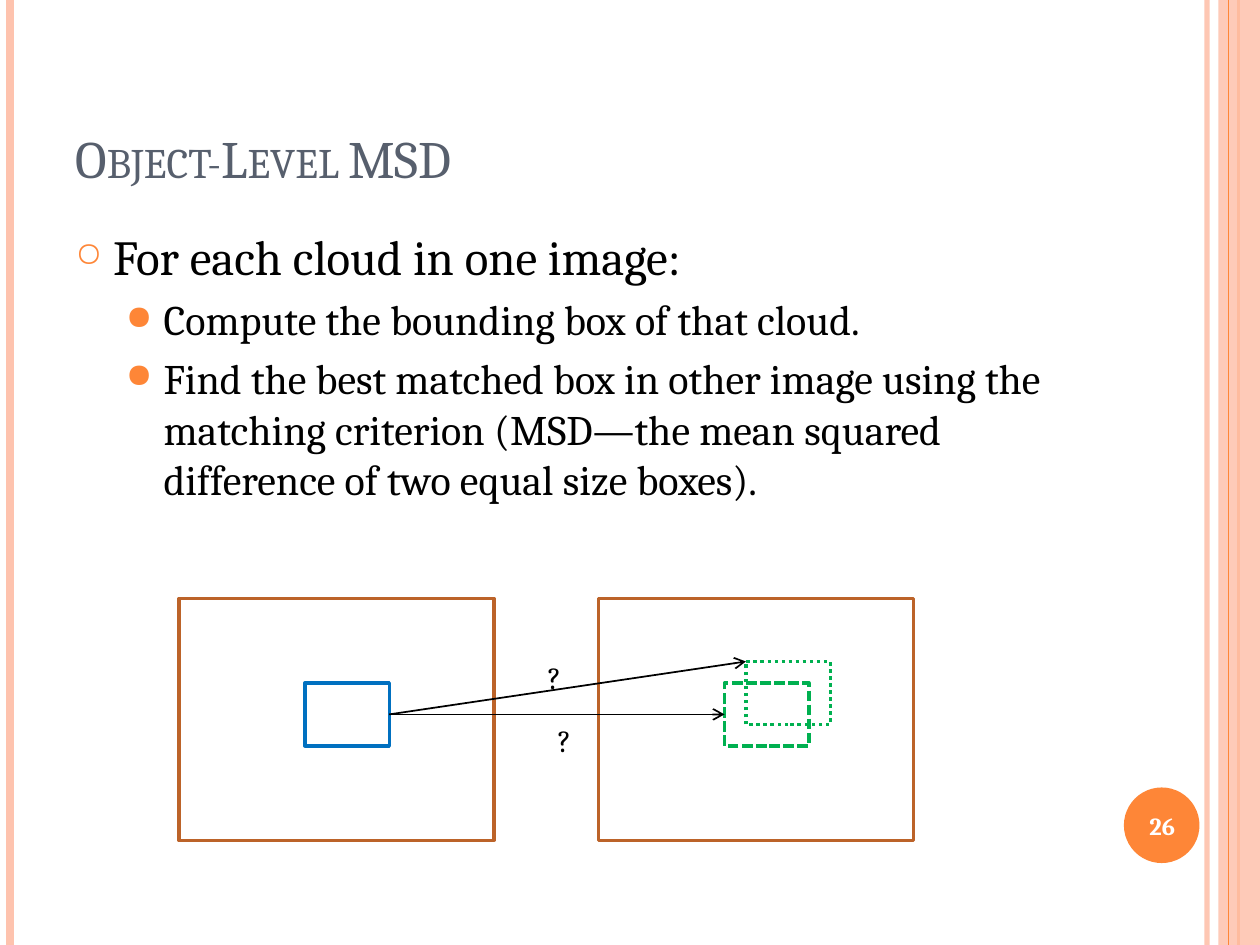
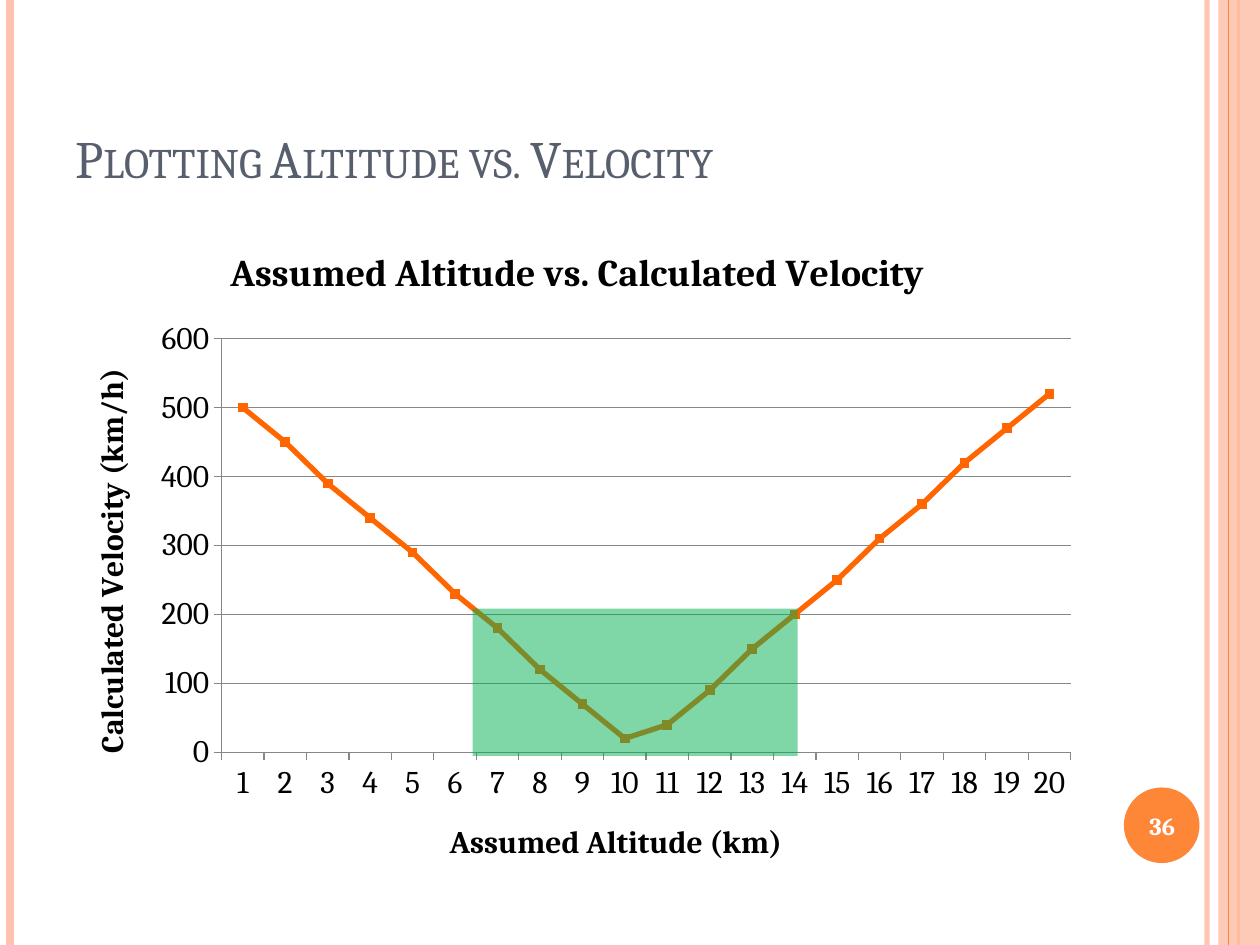
from lxml.etree import SubElement
from pptx import Presentation
from pptx.chart.data import CategoryChartData
from pptx.dml.color import RGBColor
from pptx.enum.chart import XL_CHART_TYPE, XL_MARKER_STYLE, XL_TICK_MARK
from pptx.enum.dml import MSO_LINE
from pptx.enum.shapes import MSO_CONNECTOR, MSO_SHAPE
from pptx.enum.text import MSO_ANCHOR, PP_ALIGN
from pptx.oxml.ns import qn
from pptx.util import Inches, Pt

FONT = "Cambria"
ORANGE, PEACH, SLATE = "FE8637", "FEC3AE", "575F6D"
BLACK, WHITE, GREY = "000000", "FFFFFF", "878787"
BROWN, BLUE, GREEN, FLAME = "BC6329", "0070C0", "00B050", "FF6600"
BODY = (0.5, 1.75, 8.17, 5.33)


def color(code):
    return RGBColor.from_string(code)


def fade(shape, percent):
    """Make every colour of a shape partly transparent."""
    if percent < 100:
        for tint in shape._element.spPr.iter(qn("a:srgbClr")):
            SubElement(tint, qn("a:alpha"), val=str(percent * 1000))


def style(font, size, tint=BLACK, bold=False):
    font.name, font.size, font.bold = FONT, Pt(size), bold
    font.color.rgb = color(tint)


def bullet(para, sign, scale, left):
    props = para._p.get_or_add_pPr()
    props.set("marL", str(Inches(left)))
    props.set("indent", str(Inches(-0.3)))
    tint = SubElement(props, qn("a:buClr"))
    SubElement(tint, qn("a:srgbClr"), val=ORANGE)
    SubElement(props, qn("a:buSzPct"), val=str(scale * 1000))
    SubElement(props, qn("a:buChar"), char=sign)


def write(para, words, size=18, tint=BLACK, bold=False, small=False,
          align=None, before=0):
    run = para.add_run()
    run.text = words
    style(run.font, size, tint, bold)
    if small:
        run.font._element.set("cap", "small")
    if align is not None:
        para.alignment = align
    if before:
        para.space_before = Pt(before)


class Deck:
    def __init__(self):
        self.pres = Presentation()
        self.pres.slide_width, self.pres.slide_height = Inches(10), Inches(7.5)
        self.slide = None

    def start(self, title, number):
        """Add a slide with its side bands, title and page number."""
        self.slide = self.pres.slides.add_slide(self.pres.slide_layouts[6])
        # Side bands
        for x, tint, width, alpha in ((9.58, PEACH, 3, 93), (0.08, PEACH, 4.5, 100),
                                      (9.83, ORANGE, 1.5, 100)):
            self.line((x, 0), (x, 7.5), tint, width, alpha=alpha)
        self.shape((9.67, 0, 0.33, 7.5), fill=PEACH, alpha=87)
        self.line((9.75, 0), (9.75, 7.5), ORANGE, 0.75)
        # Title and page number
        self.text((0.5, 0.3, 8.17, 1.25), title, anchor=MSO_ANCHOR.BOTTOM,
                  size=30, tint=SLATE, small=True)
        self.shape((8.92, 6.25, 0.6, 0.6), MSO_SHAPE.OVAL, fill=ORANGE)
        self.text((8.89, 6.27, 0.67, 0.57), str(number), anchor=MSO_ANCHOR.MIDDLE,
                  size=14, tint=WHITE, bold=True, align=PP_ALIGN.CENTER)

    def frame(self, box, anchor=MSO_ANCHOR.TOP, wrap=True):
        frame = self.slide.shapes.add_textbox(*map(Inches, box)).text_frame
        frame.word_wrap, frame.vertical_anchor = wrap, anchor
        return frame

    def text(self, box, words, anchor=MSO_ANCHOR.TOP, wrap=True, **form):
        write(self.frame(box, anchor, wrap).paragraphs[0], words, **form)

    def bullets(self, box, items):
        frame = self.frame(box)
        for i, (level, words) in enumerate(items):
            para = frame.add_paragraph() if i else frame.paragraphs[0]
            sign, scale, left, size = (("○", 70, 0.3, 28), ("●", 80, 0.7, 24))[level]
            bullet(para, sign, scale, left)
            write(para, words, size=size, before=4.8 if i else 0)

    def shape(self, box, kind=MSO_SHAPE.RECTANGLE, fill=None, edge=None,
              dash=None, alpha=100):
        shape = self.slide.shapes.add_shape(kind, *map(Inches, box))
        shape.shadow.inherit = False
        if fill:
            shape.fill.solid()
            shape.fill.fore_color.rgb = color(fill)
        else:
            shape.fill.background()
        if edge:
            shape.line.color.rgb = color(edge)
            shape.line.width = Pt(2)
            shape.line.dash_style = dash
        else:
            shape.line.fill.background()
        fade(shape, alpha)
        return shape

    def line(self, start, end, tint=BLACK, width=1.0, arrow=False, alpha=100):
        line = self.slide.shapes.add_connector(
            MSO_CONNECTOR.STRAIGHT, *map(Inches, (*start, *end)))
        line.line.color.rgb = color(tint)
        line.line.width = Pt(width)
        if arrow:
            SubElement(line.line._get_or_add_ln(), qn("a:tailEnd"), type="arrow")
        SubElement(line._element.spPr, qn("a:effectLst"))
        fade(line, alpha)
        return line

    def chart(self, box, title, names, cats, values):
        data = CategoryChartData()
        data.categories = cats
        data.add_series("Series 1", values)
        chart = self.slide.shapes.add_chart(
            XL_CHART_TYPE.LINE_MARKERS, *map(Inches, box), data).chart
        style(chart.font, 18)
        chart.has_legend = False
        chart.has_title = True
        write(chart.chart_title.text_frame.paragraphs[0], title, size=21.6, bold=True)
        # Axes
        for axis, name in zip((chart.category_axis, chart.value_axis), names):
            write(axis.axis_title.text_frame.paragraphs[0], name, bold=True)
            axis.major_tick_mark = XL_TICK_MARK.OUTSIDE
            axis.minor_tick_mark = XL_TICK_MARK.NONE
            axis.format.line.color.rgb = color(GREY)
        axis = chart.value_axis
        axis.minimum_scale, axis.maximum_scale, axis.major_unit = 0, 600, 100
        axis.major_gridlines.format.line.color.rgb = color(GREY)
        # Series
        plot = chart.plots[0]
        plot.vary_by_categories = False
        series = plot.series[0]
        series.smooth = False
        series.format.line.color.rgb = color(FLAME)
        series.format.line.width = Pt(3)
        mark = series.marker
        mark.style, mark.size = XL_MARKER_STYLE.SQUARE, 5
        mark.format.fill.solid()
        mark.format.fill.fore_color.rgb = color(FLAME)
        mark.format.line.color.rgb = color(FLAME)
        # Place of the plot area inside the chart
        area = chart._chartSpace.chart.plotArea
        for old in area.findall(qn("c:layout")):
            area.remove(old)
        layout = SubElement(area, qn("c:layout"))
        area.insert(0, layout)
        place = SubElement(layout, qn("c:manualLayout"))
        for tag, val in (("layoutTarget", "inner"), ("xMode", "edge"),
                         ("yMode", "edge"), ("x", 0.154), ("y", 0.176),
                         ("w", 0.825), ("h", 0.616)):
            SubElement(place, qn("c:" + tag), val=str(val))


def match(deck):
    deck.start("Object-Level MSD", 26)
    deck.bullets(BODY, (
        (0, "For each cloud in one image:"),
        (1, "Compute the bounding box of that cloud."),
        (1, "Find the best matched box in other image using the matching criterion "
            "(MSD—the mean squared difference of two equal size boxes)."),
    ))
    # Two images
    for x in (1.42, 4.75):
        deck.shape((x, 4.75, 2.5, 1.92), edge=BROWN)
    # Cloud box and its candidate matches
    size = (0.67, 0.5)
    cloud = deck.shape((2.42, 5.42, *size), edge=BLUE)
    near = deck.shape((5.75, 5.42, *size), edge=GREEN, dash=MSO_LINE.SQUARE_DOT)
    deck.shape((5.92, 5.25, *size), edge=GREEN, dash=MSO_LINE.ROUND_DOT)
    for end in ((5.75, 5.67), (5.92, 5.25)):
        arrow = deck.line((3.09, 5.67), end, arrow=True)
        arrow.begin_connect(cloud, 3)
        if end[0] == 5.75:
            arrow.end_connect(near, 1)
    for x, y in ((4.25, 5.17), (4.33, 5.67)):
        deck.text((x, y, 0.31, 0.4), "?", wrap=False)


def graph(deck):
    deck.start("Plotting Altitude vs. Velocity", 36)
    deck.chart(BODY, "Assumed Altitude vs. Calculated Velocity",
               ("Assumed Altitude (km)", "Calculated Velocity (km/h)"),
               [str(n) for n in range(1, 21)],
               (500, 450, 390, 340, 290, 230, 180, 120, 70, 20,
                40, 90, 150, 200, 250, 310, 360, 420, 470, 520))
    # Range of likely altitudes
    deck.shape((3.75, 4.83, 2.58, 1.17), fill=GREEN, alpha=50)


def main():
    deck = Deck()
    match(deck)
    graph(deck)
    deck.pres.save("out.pptx")


if __name__ == "__main__":
    main()
